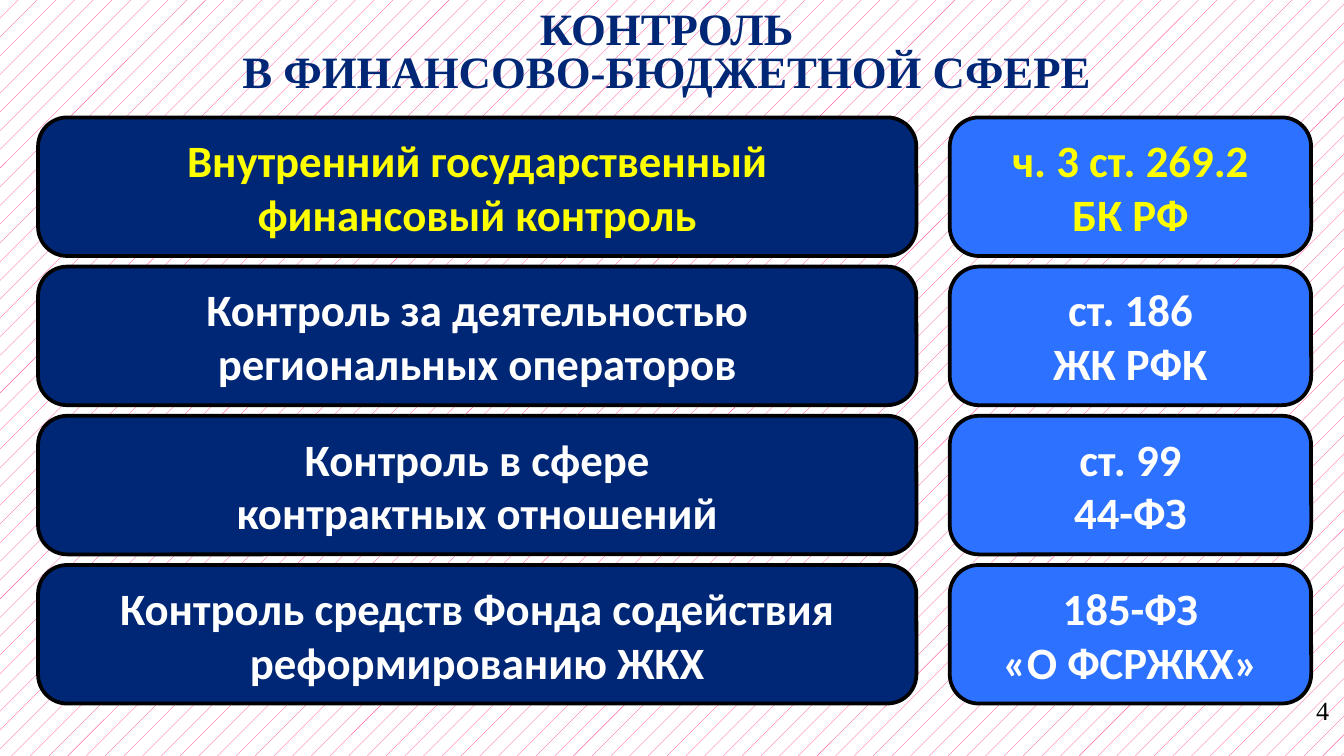
from dataclasses import dataclass

import pptx
import pptx.dml.color
import pptx.enum.dml
import pptx.enum.shapes
import pptx.enum.text
import pptx.util

Cm = pptx.util.Cm
Align = pptx.enum.text.PP_ALIGN
Anchor = pptx.enum.text.MSO_ANCHOR


@dataclass(frozen=True)
class Theme:
    navy: str = "002776"
    blue: str = "2C71FF"
    yellow: str = "FFFF00"
    white: str = "FFFFFF"
    black: str = "000000"
    pink: str = "FF388C"
    serif: str = "Times New Roman"
    sans: str = "Calibri"
    main_size: int = 24
    number_size: int = 14
    outline: int = 2


THEME = Theme()

CONTROLS = [
    (["Внутренний государственный финансовый контроль"],
     ["ч. 3 ст. 269.2\nБК РФ"], THEME.yellow),
    (["Контроль за деятельностью\nрегиональных операторов"],
     ["ст. 186", "ЖК РФК"], THEME.white),
    (["Контроль в сфере", "контрактных отношений"],
     ["ст. 99", "44-ФЗ"], THEME.white),
    (["Контроль средств Фонда содействия реформированию ЖКХ"],
     ["185-ФЗ", "«О ФСРЖКХ»"], THEME.white),
]


def rgb(value):
    return pptx.dml.color.RGBColor.from_string(value)


def write(frame, paragraphs, font, size, color, bold=True, align=Align.CENTER, spacing=None):
    frame.word_wrap = True
    for index, words in enumerate(paragraphs):
        paragraph = frame.paragraphs[0] if index == 0 else frame.add_paragraph()
        paragraph.alignment = align
        paragraph.line_spacing = spacing
        for number, line in enumerate(words.split("\n")):
            if number:
                paragraph.add_line_break()
            run = paragraph.add_run()
            run.text = line
            run.font.name = font
            run.font.size = pptx.util.Pt(size)
            run.font.bold = bold
            run.font.color.rgb = rgb(color)


def paint_background(slide):
    fill = slide.background.fill
    fill.patterned()
    fill.pattern = pptx.enum.dml.MSO_PATTERN.PERCENT_5
    fill.fore_color.rgb = rgb(THEME.pink)
    fill.back_color.rgb = rgb(THEME.white)


def add_title(slide):
    title = slide.shapes.add_textbox(Cm(2.49), Cm(0), Cm(20.22), Cm(2.03)).text_frame
    title.vertical_anchor = Anchor.MIDDLE
    write(title, ["КОНТРОЛЬ\nВ ФИНАНСОВО-БЮДЖЕТНОЙ СФЕРЕ"],
          THEME.serif, THEME.main_size, THEME.navy, spacing=0.8)


def add_page_number(slide):
    number = slide.shapes.add_textbox(Cm(24.18), Cm(13), Cm(1.19), Cm(0.99)).text_frame
    write(number, ["4"], THEME.serif, THEME.number_size, THEME.black,
          bold=False, align=Align.RIGHT)


def add_card(slide, left, top, width, fill, paragraphs, color):
    card = slide.shapes.add_shape(
        pptx.enum.shapes.MSO_SHAPE.ROUNDED_RECTANGLE, Cm(left), Cm(top), Cm(width), Cm(2.62))
    card.adjustments[0] = 0.21
    card.shadow.inherit = False
    card.fill.solid()
    card.fill.fore_color.rgb = rgb(fill)
    card.line.color.rgb = rgb(THEME.black)
    card.line.width = pptx.util.Pt(THEME.outline)
    card.text_frame.vertical_anchor = Anchor.MIDDLE
    card.text_frame.auto_size = pptx.enum.text.MSO_AUTO_SIZE.SHAPE_TO_FIT_TEXT
    write(card.text_frame, paragraphs, THEME.sans, THEME.main_size, color)


def main():
    presentation = pptx.Presentation()
    presentation.slide_width = Cm(25.4)
    presentation.slide_height = Cm(14.29)
    slide = presentation.slides.add_slide(presentation.slide_layouts[6])
    paint_background(slide)
    add_page_number(slide)
    add_title(slide)
    first_top, row_step = 2.22, 2.82
    for row, (control, law, color) in enumerate(CONTROLS):
        top = first_top + row * row_step
        add_card(slide, 0.72, top, 16.6, THEME.navy, control, color)
        add_card(slide, 17.95, top, 6.83, THEME.blue, law, color)
    presentation.save("out.pptx")


if __name__ == "__main__":
    main()
